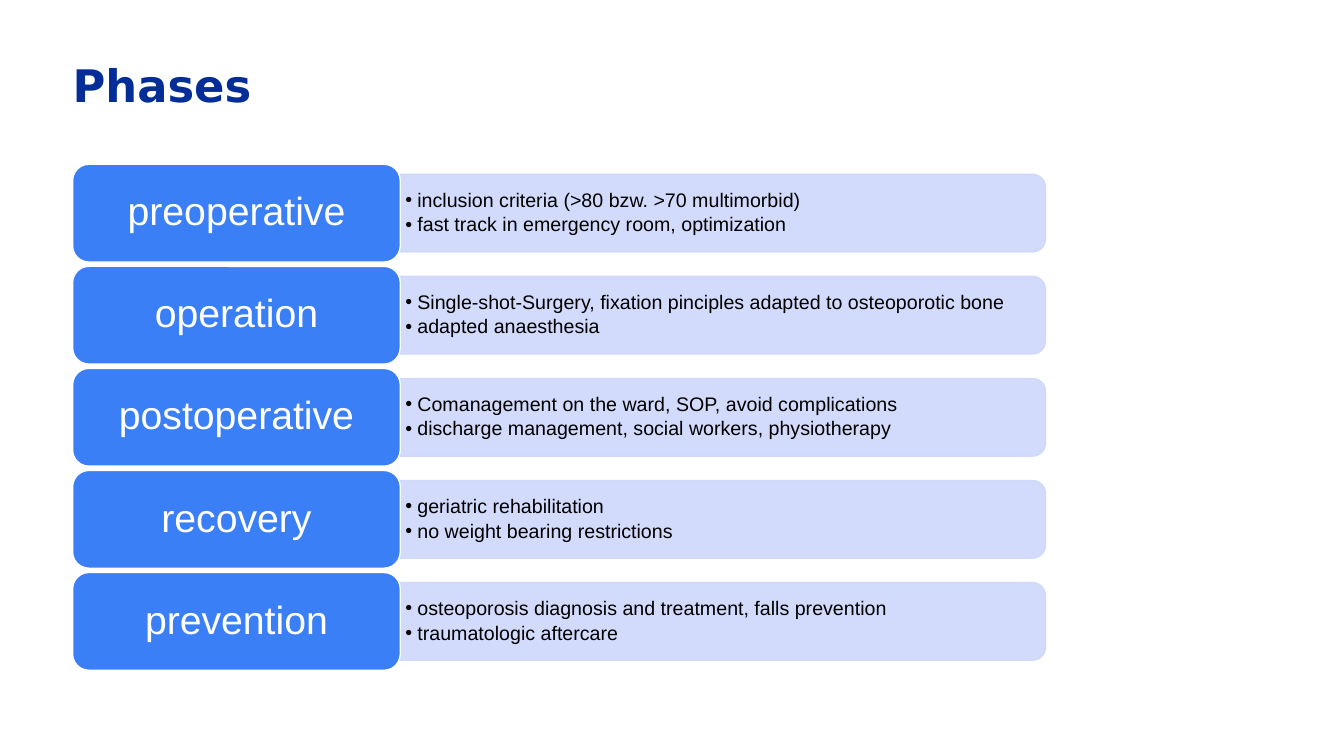
import math
from dataclasses import dataclass

import lxml.etree
import pptx
import pptx.dml.color
import pptx.enum.shapes
import pptx.enum.text
import pptx.oxml.ns
import pptx.util

Inches = pptx.util.Inches
Pt = pptx.util.Pt
qn = pptx.oxml.ns.qn

LABEL_LEFT, LABEL_WIDTH, LABEL_HEIGHT = 0.72, 3.25, 0.97
DETAIL_LEFT, DETAIL_WIDTH, DETAIL_HEIGHT = 3.96, 6.41, 0.77
DETAIL_RADIUS = 0.13
ARC_STEPS = 12
FIRST_TOP, LAST_TOP = 1.63, 5.68
BLUE, PALE_BLUE, NAVY = "3B7FF6", "CED8FB", "042D98"
WHITE, BLACK = "FFFFFF", "000000"


@dataclass
class Phase:
    name: str
    details: list[str]


PHASES = [
    Phase("preoperative", ["inclusion criteria (>80 bzw. >70 multimorbid)",
                           "fast track in emergency room, optimization"]),
    Phase("operation", ["Single-shot-Surgery, fixation pinciples adapted to osteoporotic bone",
                        "adapted anaesthesia"]),
    Phase("postoperative", ["Comanagement on the ward, SOP, avoid complications",
                            "discharge management, social workers, physiotherapy"]),
    Phase("recovery", ["geriatric rehabilitation", "no weight bearing restrictions"]),
    Phase("prevention", ["osteoporosis diagnosis and treatment, falls prevention",
                         "traumatologic aftercare"]),
]


def color(value: str) -> pptx.dml.color.RGBColor:
    return pptx.dml.color.RGBColor.from_string(value)


def set_font(paragraph, name: str, size: float, value: str, bold: bool = False) -> None:
    paragraph.font.name = name
    paragraph.font.size = Pt(size)
    paragraph.font.bold = bold
    paragraph.font.color.rgb = color(value)


def set_margins(frame, left: float, top: float, right: float, bottom: float) -> None:
    frame.margin_left, frame.margin_top = Inches(left), Inches(top)
    frame.margin_right, frame.margin_bottom = Inches(right), Inches(bottom)


def style_shape(shape, fill: str, line: str) -> None:
    shape.shadow.inherit = False
    shape.fill.solid()
    shape.fill.fore_color.rgb = color(fill)
    shape.line.color.rgb = color(line)
    shape.line.width = Pt(1)
    shape.text_frame.word_wrap = True
    shape.text_frame.vertical_anchor = pptx.enum.text.MSO_ANCHOR.MIDDLE


def set_opacity(shape, percent: int) -> None:
    for element in shape.element.spPr.iter(qn("a:srgbClr")):
        lxml.etree.SubElement(element, qn("a:alpha"), val=str(percent * 1000))


def add_bullet(paragraph) -> None:
    properties = paragraph._p.get_or_add_pPr()
    properties.set("marL", str(Inches(0.12)))
    properties.set("indent", str(-Inches(0.12)))
    lxml.etree.SubElement(properties, qn("a:buFont"), typeface="Arial")
    lxml.etree.SubElement(properties, qn("a:buChar"), char="•")


def corner(center_x: float, center_y: float, start: int) -> list[tuple[int, int]]:
    angles = [math.radians(start + 90 * step / ARC_STEPS) for step in range(ARC_STEPS + 1)]
    return [(Inches(center_x + DETAIL_RADIUS * math.cos(angle)),
             Inches(center_y + DETAIL_RADIUS * math.sin(angle))) for angle in angles]


def add_detail(slide, phase: Phase, top: float) -> None:
    bottom = top + DETAIL_HEIGHT
    arc_x = DETAIL_LEFT + DETAIL_WIDTH - DETAIL_RADIUS
    builder = slide.shapes.build_freeform(Inches(DETAIL_LEFT), Inches(top))
    builder.add_line_segments(
        corner(arc_x, top + DETAIL_RADIUS, -90)
        + corner(arc_x, bottom - DETAIL_RADIUS, 0)
        + [(Inches(DETAIL_LEFT), Inches(bottom))], close=True)
    shape = builder.convert_to_shape()
    style_shape(shape, PALE_BLUE, PALE_BLUE)
    set_opacity(shape, 90)
    frame = shape.text_frame
    set_margins(frame, 0.06, 0.07, 0.1, 0.07)
    frame.text = "\n".join(phase.details)
    for paragraph in frame.paragraphs:
        add_bullet(paragraph)
        paragraph.alignment = pptx.enum.text.PP_ALIGN.LEFT
        paragraph.line_spacing = 0.9
        paragraph.space_after = Pt(2.5)
        set_font(paragraph, "Arial", 14, BLACK)


def add_label(slide, phase: Phase, top: float) -> None:
    shape = slide.shapes.add_shape(
        pptx.enum.shapes.MSO_SHAPE.ROUNDED_RECTANGLE, Inches(LABEL_LEFT), Inches(top),
        Inches(LABEL_WIDTH), Inches(LABEL_HEIGHT))
    style_shape(shape, BLUE, WHITE)
    set_margins(shape.text_frame, 0.16, 0.11, 0.16, 0.11)
    shape.text_frame.text = phase.name
    paragraph = shape.text_frame.paragraphs[0]
    paragraph.alignment = pptx.enum.text.PP_ALIGN.CENTER
    paragraph.line_spacing = 0.9
    set_font(paragraph, "Arial", 28, WHITE)


def add_title(slide, text: str) -> None:
    title = slide.shapes.title
    title.left, title.top = Inches(0.72), Inches(0.57)
    title.width, title.height = Inches(11.89), Inches(1.06)
    frame = title.text_frame
    set_margins(frame, 0, 0, 0, 0)
    frame.vertical_anchor = pptx.enum.text.MSO_ANCHOR.TOP
    frame.text = text
    frame.paragraphs[0].alignment = pptx.enum.text.PP_ALIGN.LEFT
    set_font(frame.paragraphs[0], "DejaVu Sans", 32, NAVY, bold=True)


def main() -> None:
    presentation = pptx.Presentation()
    presentation.slide_width, presentation.slide_height = Inches(13.33), Inches(7.5)
    slide = presentation.slides.add_slide(presentation.slide_layouts[5])
    add_title(slide, "Phases")
    pitch = (LAST_TOP - FIRST_TOP) / (len(PHASES) - 1)
    for index, phase in enumerate(PHASES):
        top = FIRST_TOP + index * pitch
        add_detail(slide, phase, top + (LABEL_HEIGHT - DETAIL_HEIGHT) / 2)
        add_label(slide, phase, top)
    presentation.save("out.pptx")


if __name__ == "__main__":
    main()
